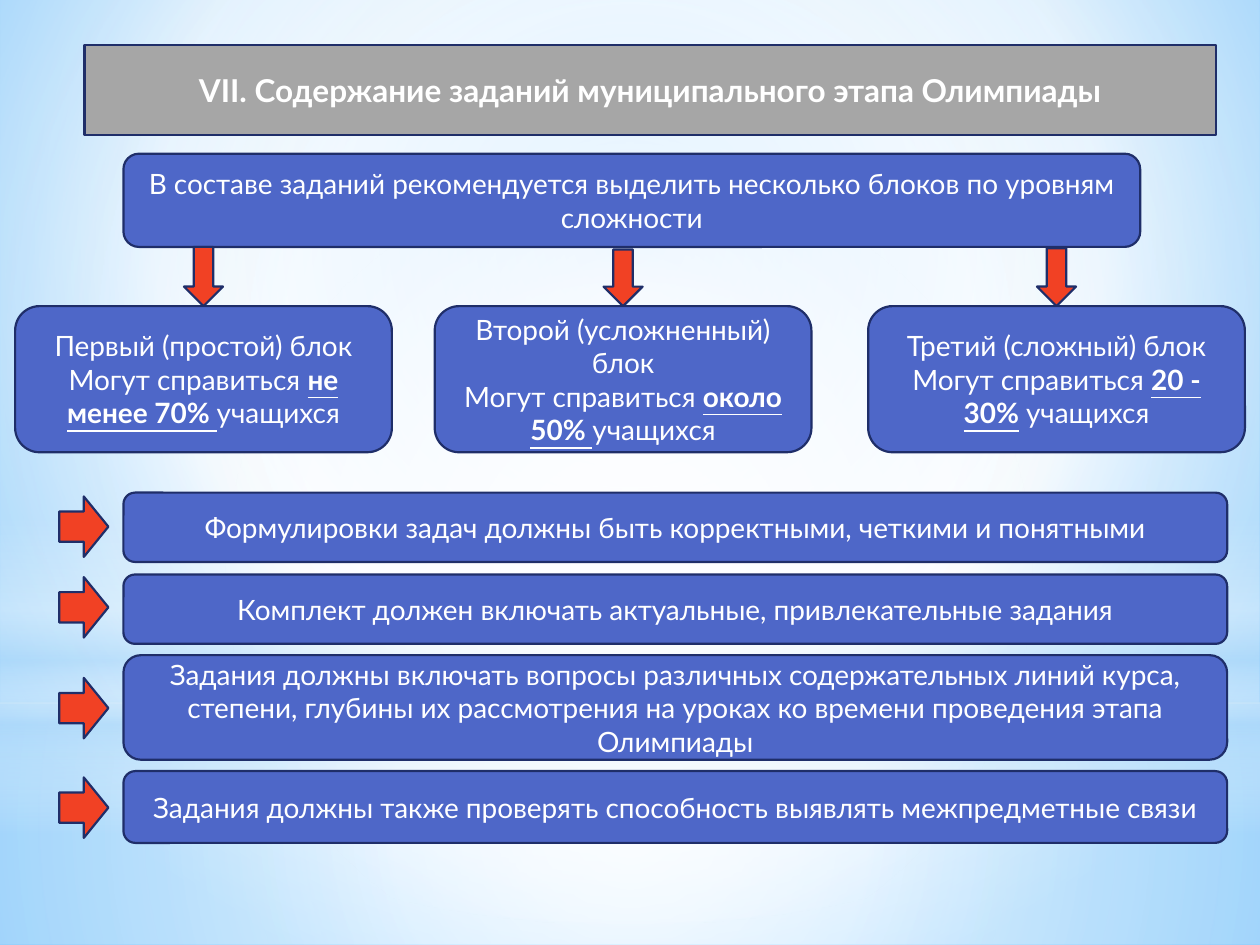
from pptx import Presentation
from pptx.dml.color import RGBColor
from pptx.enum.shapes import MSO_SHAPE
from pptx.enum.text import MSO_ANCHOR, PP_ALIGN
from pptx.oxml import parse_xml
from pptx.oxml.ns import nsdecls, qn
from pptx.util import Inches, Pt
from lxml.etree import SubElement

BLUE, RED, GRAY, NAVY, WHITE = "4E67C8", "F14124", "A6A6A6", "1F2E69", "FFFFFF"


def blend(holder, stops, rect=None):
    marks = "".join(
        f'<a:gs pos="{pos * 1000}"><a:srgbClr val="{tint}">'
        f'<a:alpha val="{alpha * 1000}"/></a:srgbClr></a:gs>'
        for pos, tint, alpha in stops)
    if rect:
        sides = " ".join(f'{side}="{share * 1000}"' for side, share in zip("ltrb", rect))
        way = f'<a:path path="circle"><a:fillToRect {sides}/></a:path>'
    else:
        way = '<a:lin ang="5400000" scaled="0"/>'
    solid = holder.find(qn("a:solidFill"))
    holder.replace(solid, parse_xml(
        f'<a:gradFill {nsdecls("a")} rotWithShape="1"><a:gsLst>{marks}</a:gsLst>{way}</a:gradFill>'))


def form(shape, text="", fill=BLUE, size=16, bold=False):
    shape.fill.solid()
    shape.fill.fore_color.rgb = RGBColor.from_string(fill)
    shape.line.color.rgb = RGBColor.from_string(NAVY)
    shape.line.width = Pt(1.25)
    if not text:
        return
    frame = shape.text_frame
    frame.word_wrap = True
    frame.vertical_anchor = MSO_ANCHOR.MIDDLE
    for i, line in enumerate(text.split("\n")):
        para = frame.add_paragraph() if i else frame.paragraphs[0]
        para.alignment = PP_ALIGN.CENTER
        for j, part in enumerate(line.split("*")):
            run = para.add_run()
            run.text = part
            font = run.font
            font.name, font.size = "Lato", Pt(size)
            font.bold = bold or j % 2 == 1
            font.underline = j % 2 == 1
            font.color.rgb = RGBColor.from_string(WHITE)


deck = Presentation()
deck.slide_width, deck.slide_height = Inches(10), Inches(7.5)
slide = deck.slides.add_slide(deck.slide_layouts[5])
shapes = slide.shapes

slide.background.fill.solid()
blend(slide.element.xpath(".//p:bgPr")[0],
      [(0, "9ED5FF", 100), (60, WHITE, 100), (100, "5BB9FF", 100)], (20, 10, 20, 60))

SKY = "B4DCFA"
MID = (50, 50, 50, 50)
glows = [
    (MSO_SHAPE.RECTANGLE, 5.58, 1.92, MID,
     [(0, WHITE, 91), (37, WHITE, 76), (100, SKY, 79)]),
    (MSO_SHAPE.RECTANGLE, 0, 5.58, MID,
     [(0, WHITE, 89), (48, WHITE, 62), (100, SKY, 79)]),
    (MSO_SHAPE.RECTANGLE, 4.12, 2.5, None,
     [(0, WHITE, 0), (29, WHITE, 30), (45, SKY, 40),
      (55, WHITE, 26), (65, SKY, 60), (100, WHITE, 0)]),
    (MSO_SHAPE.OVAL, 1.75, 5.58, MID, [(0, WHITE, 100), (56, WHITE, 0)]),
]
for kind, top, height, rect, stops in glows:
    glow = shapes.add_shape(kind, 0, Inches(top), Inches(10), Inches(height))
    glow.shadow.inherit = False
    glow.line.fill.background()
    glow.fill.solid()
    blend(glow.element.spPr, stops, rect)

title = shapes.title
title.left, title.top = Inches(0.67), Inches(0.36)
title.width, title.height = Inches(8.98), Inches(0.71)
SubElement(title.element.spPr, qn("a:prstGeom"), prst="roundRect")
form(title, "VII. Содержание заданий муниципального этапа Олимпиады",
     fill=GRAY, size=18, bold=True)
title.element.getparent().append(title.element)

lead = shapes.add_shape(MSO_SHAPE.ROUNDED_RECTANGLE,
                        Inches(0.98), Inches(1.22), Inches(8.07), Inches(0.74))
lead.shadow.inherit = False
form(lead, "В составе заданий рекомендуется выделить несколько блоков по уровням сложности")

blocks = [
    (0.12, 1.96, "Первый (простой) блок\nМогут справиться *не менее 70% *учащихся"),
    (3.45, 1.98, "Второй (усложненный) блок\nМогут справиться *около 50% *учащихся"),
    (6.89, 1.97, "Третий (сложный) блок\nМогут справиться *20 - 30%* учащихся"),
]
for left, top, text in blocks:
    block = shapes.add_shape(MSO_SHAPE.ROUNDED_RECTANGLE,
                             Inches(left), Inches(2.43), Inches(2.99), Inches(1.16))
    block.shadow.inherit = False
    form(block, text)
    arrow = shapes.add_shape(MSO_SHAPE.DOWN_ARROW, Inches(left + 1.34), Inches(top),
                             Inches(0.31), Inches(2.43 - top))
    arrow.shadow.inherit = False
    form(arrow, fill=RED)

rules = [
    (3.91, 0.55, 3.94, "Формулировки задач должны быть корректными, четкими и понятными"),
    (4.56, 0.55, 4.58, "Комплект должен включать актуальные, привлекательные задания"),
    (5.2, 0.83, 5.38, "Задания должны включать вопросы различных содержательных линий курса, "
     "степени, глубины их рассмотрения на уроках ко времени проведения этапа Олимпиады"),
    (6.12, 0.57, 6.17, "Задания должны также проверять способность выявлять межпредметные связи"),
]
for top, height, tip, text in rules:
    rule = shapes.add_shape(MSO_SHAPE.ROUNDED_RECTANGLE,
                            Inches(0.98), Inches(top), Inches(8.76), Inches(height))
    rule.shadow.inherit = False
    form(rule, text)
    arrow = shapes.add_shape(MSO_SHAPE.RIGHT_ARROW,
                             Inches(0.47), Inches(tip), Inches(0.39), Inches(0.48))
    arrow.shadow.inherit = False
    form(arrow, fill=RED)

deck.save("out.pptx")
